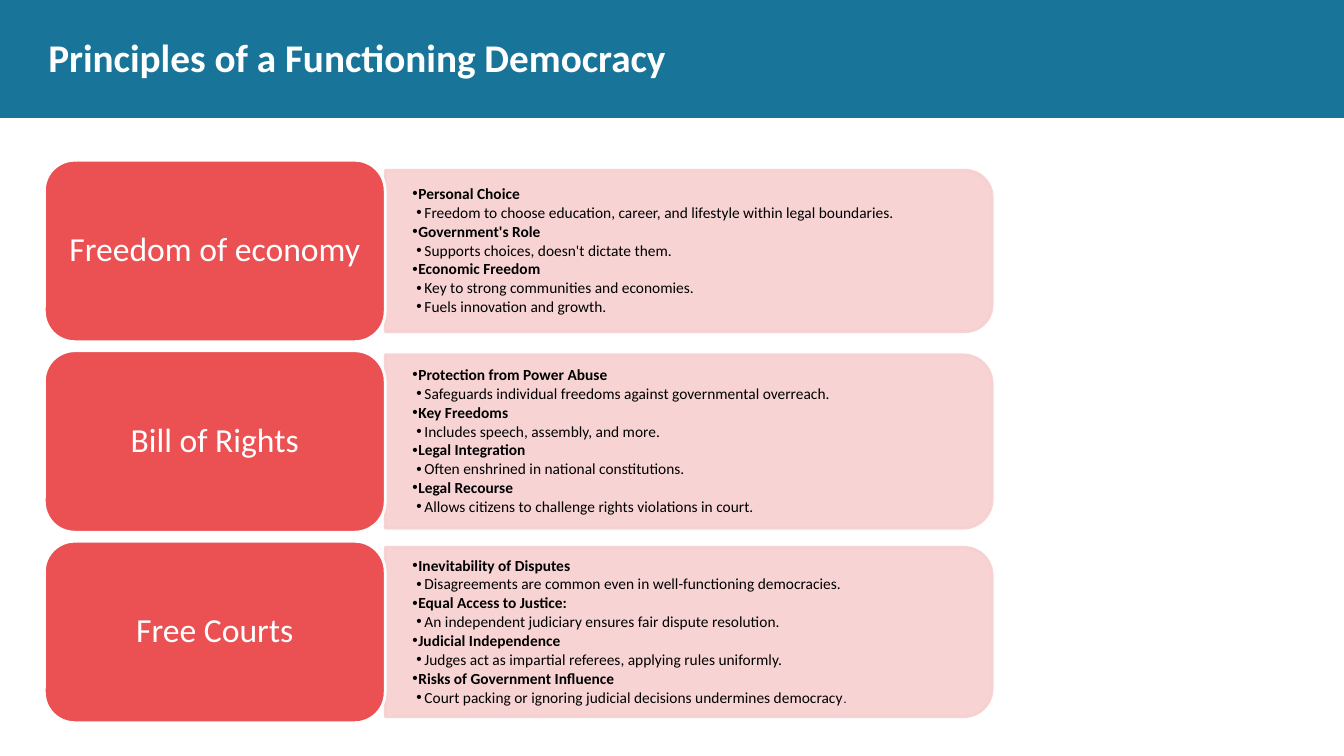
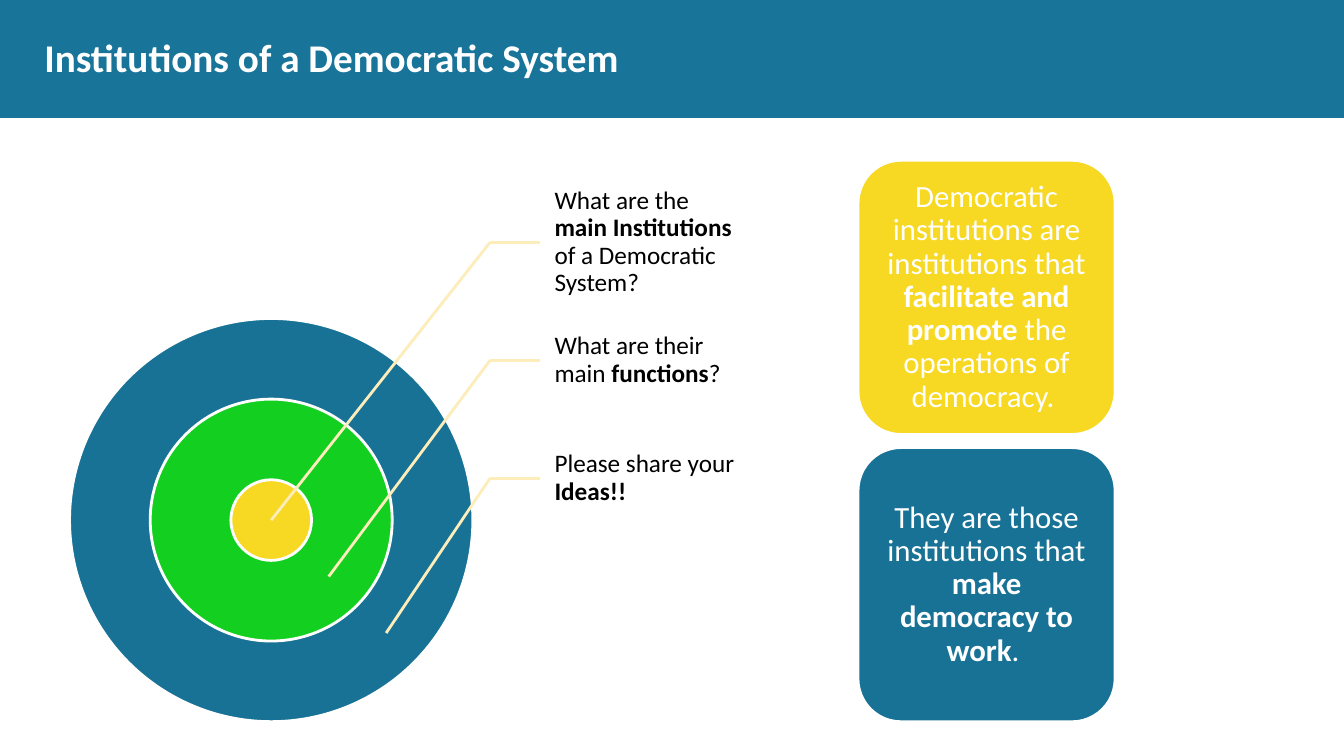
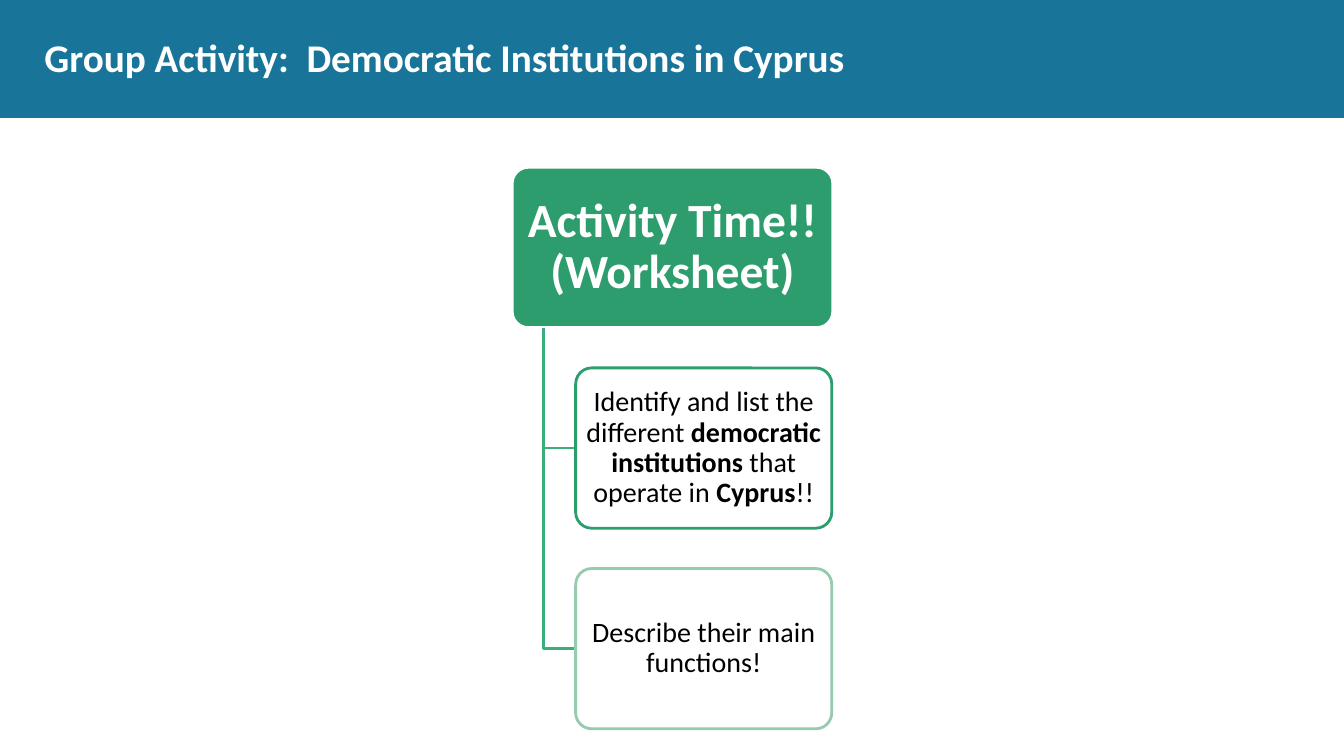
from pptx import Presentation
from pptx.dml.color import RGBColor
from pptx.enum.shapes import MSO_CONNECTOR, MSO_SHAPE
from pptx.enum.text import MSO_ANCHOR, MSO_AUTO_SIZE, PP_ALIGN
from pptx.oxml.ns import qn
from pptx.util import Inches, Pt
from lxml.etree import SubElement

FONT = "Calibri"
COLORS = {
    "band": "187498",
    "white": "FFFFFF",
    "black": "000000",
    "red": "EB5053",
    "pink": "F7CFCF",
    "blue": "187295",
    "lime": "13CF1F",
    "yellow": "F7D822",
    "cream": "FCEDBA",
    "green": "2D9D6D",
    "branch": "3AAF7B",
    "pale_green": "98CAB0",
}
PRINCIPLES = [
    ("Freedom of economy", 1.6, [
        ("Personal Choice",
         ["Freedom to choose education, career, and lifestyle within legal boundaries."]),
        ("Government's Role", ["Supports choices, doesn't dictate them."]),
        ("Economic Freedom",
         ["Key to strong communities and economies.", "Fuels innovation and growth."]),
    ]),
    ("Bill of Rights", 1.72, [
        ("Protection from Power Abuse",
         ["Safeguards individual freedoms against governmental overreach."]),
        ("Key Freedoms", ["Includes speech, assembly, and more."]),
        ("Legal Integration", ["Often enshrined in national constitutions."]),
        ("Legal Recourse", ["Allows citizens to challenge rights violations in court."]),
    ]),
    ("Free Courts", 1.68, [
        ("Inevitability of Disputes",
         ["Disagreements are common even in well-functioning democracies."]),
        ("Equal Access to Justice:",
         ["An independent judiciary ensures fair dispute resolution."]),
        ("Judicial Independence",
         ["Judges act as impartial referees, applying rules uniformly."]),
        ("Risks of Government Influence",
         ["Court packing or ignoring judicial decisions undermines democracy"]),
    ]),
]
QUESTIONS = [
    "What are the **main Institutions **of a Democratic System?",
    "What are their main **functions**?",
    "Please share your **Ideas!!**",
]
DEFINITIONS = [
    ("Democratic institutions are institutions that **facilitate and promote **"
     "the operations of democracy. ", "yellow"),
    ("They are those institutions that **make democracy to work**. ", "blue"),
]
TASKS = [
    ("Identify and list the different **democratic institutions **that operate in "
     "**Cyprus**!!", "green"),
    ("Describe their main functions!", "pale_green"),
]


def rgb(color):
    return RGBColor.from_string(COLORS[color])


def format_font(font, size, color, bold=False, name=FONT):
    font.name = name
    font.size = Pt(size)
    font.bold = bold
    font.color.rgb = rgb(color)


def set_frame(text_frame, insets=(0, 0, 0, 0)):
    text_frame.word_wrap = True
    text_frame.auto_size = MSO_AUTO_SIZE.NONE
    text_frame.vertical_anchor = MSO_ANCHOR.MIDDLE
    text_frame.margin_left, text_frame.margin_top = Inches(insets[0]), Inches(insets[1])
    text_frame.margin_right, text_frame.margin_bottom = Inches(insets[2]), Inches(insets[3])


def write_text(shape, text, size, color, align, insets):
    """Write one paragraph; pieces between double asterisks are bold."""
    set_frame(shape.text_frame, insets)
    paragraph = shape.text_frame.paragraphs[0]
    paragraph.alignment = align
    paragraph.line_spacing = 0.9
    for index, piece in enumerate(text.split("**")):
        if piece:
            run = paragraph.add_run()
            run.text = piece
            format_font(run.font, size, color, bold=index % 2 == 1)


def add_box(slide, kind, left, top, width, height, fill, line="white"):
    shape = slide.shapes.add_shape(
        kind, Inches(left), Inches(top), Inches(width), Inches(height))
    shape.shadow.inherit = False
    shape.fill.solid()
    shape.fill.fore_color.rgb = rgb(fill)
    shape.line.color.rgb = rgb(line)
    shape.line.width = Pt(2)
    return shape


def add_card(slide, left, top, width, height, fill, text, size, insets,
             color="white", line="white", radius=0.167):
    card = add_box(slide, MSO_SHAPE.ROUNDED_RECTANGLE, left, top, width, height, fill, line)
    card.adjustments[0] = radius
    write_text(card, text, size, color, PP_ALIGN.CENTER, insets)
    return card


def add_text_box(slide, left, top, width, height):
    return slide.shapes.add_textbox(
        Inches(left), Inches(top), Inches(width), Inches(height))


def add_line(slide, start, end):
    connector = slide.shapes.add_connector(
        MSO_CONNECTOR.STRAIGHT, *(Inches(value) for value in start + end))
    connector.line.color.rgb = rgb("cream")
    connector.line.width = Pt(2)
    SubElement(connector.element.spPr, qn("a:effectLst"))
    return connector


def add_band(slide, width):
    band = add_box(slide, MSO_SHAPE.RECTANGLE, 0, 0, width, 1.17, "band")
    band.line.fill.background()
    slide.slide_layout.shapes.element.insert(2, band.element)


def add_titled_slide(presentation, title, left=0.44):
    slide = presentation.slides.add_slide(presentation.slide_layouts[5])
    placeholder = slide.shapes.title
    placeholder.left, placeholder.top = Inches(left), Inches(0.19)
    placeholder.width, placeholder.height = Inches(12.46), Inches(0.74)
    placeholder.text_frame.text = title
    set_frame(placeholder.text_frame)
    paragraph = placeholder.text_frame.paragraphs[0]
    paragraph.alignment = PP_ALIGN.LEFT
    format_font(paragraph.runs[0].font, 28, "white", bold=True)
    return slide


def set_bullet(paragraph, level):
    properties = paragraph._p.get_or_add_pPr()
    properties.set("marL", str(Inches(0.06 * level)))
    properties.set("indent", str(Inches(-0.08)))
    SubElement(properties, qn("a:buFont")).set("typeface", "Arial")
    SubElement(properties, qn("a:buChar")).set("char", "•")


def write_bullets(shape, groups):
    text_frame = shape.text_frame
    set_frame(text_frame, (0.27, 0.14, 0.27, 0.14))
    lines = []
    for heading, details in groups:
        lines.append((heading, 1))
        lines.extend((detail, 2) for detail in details)
    text_frame.text = "\n".join(text for text, level in lines)
    for index, (paragraph, (text, level)) in enumerate(zip(text_frame.paragraphs, lines)):
        paragraph.line_spacing = 0.9
        paragraph.space_before = Pt(1.6 if index else 0)
        set_bullet(paragraph, level)
        format_font(paragraph.runs[0].font, 11, "black", bold=level == 1)


def add_panel(slide, left, center, width, height):
    panel = add_box(slide, MSO_SHAPE.ROUND_2_SAME_RECTANGLE,
                    left + (width - height) / 2, center - width / 2,
                    height, width, "pink", "pink")
    panel.rotation = 90
    panel.adjustments[0] = 0.167
    for color in panel.element.spPr.iter(qn("a:srgbClr")):
        SubElement(color, qn("a:alpha")).set("val", "90000")


def build_principles(presentation):
    slide = add_titled_slide(presentation, "Principles of a Functioning Democracy", 0.48)
    left, top, width, height, gap = 0.44, 1.59, 3.38, 1.8, 0.09
    for index, (name, panel_height, groups) in enumerate(PRINCIPLES):
        row_top = top + index * (height + gap)
        center = row_top + height / 2
        add_panel(slide, left + width, center, 6.02, panel_height)
        text_height = panel_height - 0.16
        box = add_text_box(slide, left + width, center - text_height / 2, 5.94, text_height)
        write_bullets(box, groups)
        add_card(slide, left, row_top, width, height, "red", name, 24,
                 (0.1, 0.05, 0.1, 0.05))
    full_stop = box.text_frame.paragraphs[-1].add_run()
    full_stop.text = "."
    format_font(full_stop.font, 9, "black", name="Arial")
    return slide


def build_institutions(presentation):
    slide = add_titled_slide(presentation, "Institutions of a Democratic System")
    center_x, center_y = 2.69, 5.16
    for diameter, color in ((4, "blue"), (2.4, "lime"), (0.8, "yellow")):
        add_box(slide, MSO_SHAPE.OVAL, center_x - diameter / 2, center_y - diameter / 2,
                diameter, diameter, color)
    left, top, height, bend_x = 5.36, 1.82, 1.17, 4.86
    for index, question in enumerate(QUESTIONS):
        label_top = top + index * height
        middle = label_top + height / 2
        label = add_text_box(slide, left, label_top, 2, height)
        write_text(label, question, 18, "black", PP_ALIGN.LEFT, (0.14, 0.02, 0.02, 0.02))
        stub = add_line(slide, (bend_x, middle), (left, middle))
        stub.end_connect(label, 1)
        target = (center_x + index * 0.57, center_y + index * 0.56)
        add_line(slide, (bend_x, middle), target)
    for index, (definition, color) in enumerate(DEFINITIONS):
        add_card(slide, 8.51, 1.59 + index * 2.85, 2.55, 2.72, color, definition, 22,
                 (0.09, 0.05, 0.09, 0.05))


def add_branch(slide, x, top, end_x, end_y):
    builder = slide.shapes.build_freeform(Inches(x), Inches(top))
    builder.add_line_segments(
        [(Inches(x), Inches(end_y)), (Inches(end_x), Inches(end_y))], close=False)
    branch = builder.convert_to_shape()
    branch.shadow.inherit = False
    branch.fill.background()
    branch.line.color.rgb = rgb("branch")
    branch.line.width = Pt(2)


def build_activity(presentation):
    slide = add_titled_slide(
        presentation, "Group Activity:  Democratic Institutions in Cyprus")
    left, top, height, gap = 5.08, 1.66, 1.59, 0.4
    task_left = 5.71
    add_card(slide, left, top, 3.18, height, "green", "**Activity Time!! (Worksheet)**",
             34, (0.07, 0.05, 0.07, 0.05), radius=0.1)
    for index, (task, color) in enumerate(TASKS, start=1):
        task_top = top + index * (height + gap)
        add_branch(slide, 5.39, top + height, task_left, task_top + height / 2)
        add_card(slide, task_left, task_top, 2.54, height, "white", task, 20,
                 (0.04, 0.03, 0.04, 0.03), color="black", line=color, radius=0.1)


def main():
    presentation = Presentation()
    presentation.slide_width = Inches(13.33)
    presentation.slide_height = Inches(7.5)
    first_slide = build_principles(presentation)
    add_band(first_slide, 13.33)
    build_institutions(presentation)
    build_activity(presentation)
    presentation.save("out.pptx")


if __name__ == "__main__":
    main()
